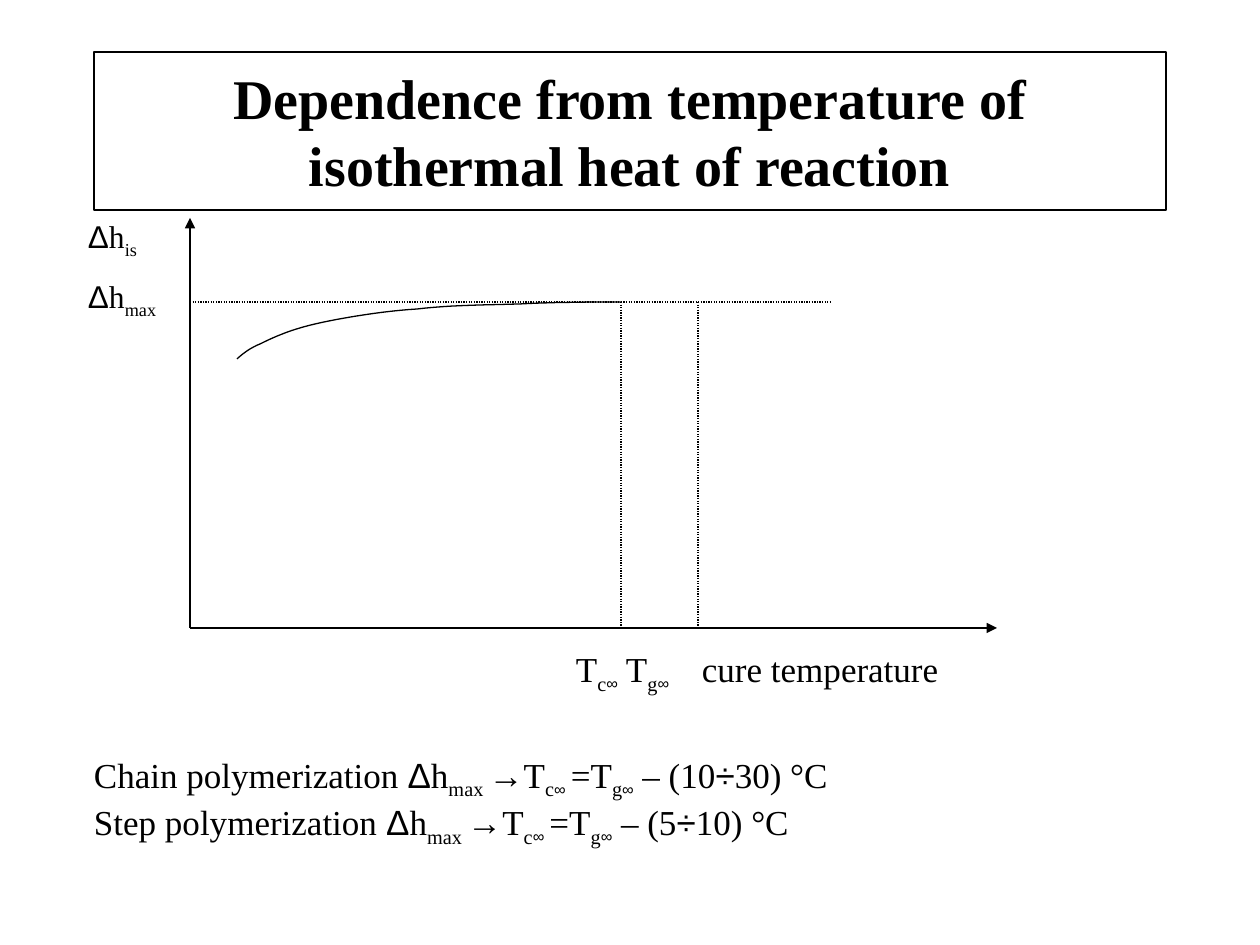
import pptx
import pptx.util
import pptx.dml.color
import pptx.enum.dml
import pptx.enum.shapes
import pptx.enum.text
import pptx.oxml
import pptx.oxml.ns

PX = 914400 / 126
BLACK = "000000"
SERIF, SANS = "Times New Roman", "Arial"
DELTA_H = [("Δ", "symbol"), ("h", "plain")]
T_C = [("T", "plain"), ("c", "sub"), ("∞", "infinity")]
T_G = [("T", "plain"), ("g", "sub"), ("∞", "infinity")]
# Start point, then two control points and an end point for each Bézier piece
CURVE = [
    (47, 141),
    (47, 141), (57, 131), (70, 126),
    (82, 120), (99, 112), (125, 106),
    (151, 100), (193, 93), (227, 91),
    (261, 87), (295, 87), (329, 86),
    (363, 84), (414, 84), (431, 84),
]


def px(length):
    return pptx.util.Emu(round(length * PX))


def color(value):
    return pptx.dml.color.RGBColor.from_string(value)


def style_line(line):
    line.color.rgb = color(BLACK)
    line.width = pptx.util.Pt(0.75)


def write(para, spans, size):
    """Add (text, style) spans; styles are plain, bold, symbol, sub and infinity."""
    for text, style in spans:
        span = para.add_run()
        span.text = text
        font = span.font
        font.name = SANS if style in ("symbol", "infinity") else SERIF
        font.size = pptx.util.Pt(16 if style == "infinity" else size)
        font.bold = style == "bold"
        font.color.rgb = color(BLACK)
        if style in ("sub", "infinity"):
            font._element.set("baseline", "-25000")


def add_text(page, left, top, width, height, inset, lines, size, gap=0):
    box = page.shapes.add_textbox(px(left), px(top), px(width), px(height))
    frame = box.text_frame
    frame.word_wrap = True
    frame.auto_size = pptx.enum.text.MSO_AUTO_SIZE.SHAPE_TO_FIT_TEXT
    frame.margin_left = frame.margin_right = px(inset)
    frame.margin_top = frame.margin_bottom = px(inset // 2)
    for index, spans in enumerate(lines):
        para = frame.add_paragraph() if index else frame.paragraphs[0]
        para.space_before = pptx.util.Pt(gap)
        write(para, spans, size)
    return box


def add_line(page, start, end, arrow=False):
    """Draw a solid arrow or a dotted guide."""
    connector = page.shapes.add_connector(
        pptx.enum.shapes.MSO_CONNECTOR.STRAIGHT, *map(px, start + end))
    style_line(connector.line)
    if arrow:
        tail = pptx.oxml.parse_xml(
            f'<a:tailEnd {pptx.oxml.ns.nsdecls("a")} type="triangle"/>')
        connector.line._get_or_add_ln().append(tail)
    else:
        connector.line.dash_style = pptx.enum.dml.MSO_LINE.ROUND_DOT
    connector._element.spPr.append(pptx.oxml.parse_xml(
        f'<a:effectLst {pptx.oxml.ns.nsdecls("a")}/>'))


def bezier_points(controls, steps=12):
    points = [controls[0]]
    for first in range(0, len(controls) - 1, 3):
        a, b, c, d = controls[first:first + 4]
        for step in range(1, steps + 1):
            t = step / steps
            u = 1 - t
            points.append(tuple(
                u**3 * a[k] + 3 * u * u * t * b[k] + 3 * u * t * t * c[k] + t**3 * d[k]
                for k in (0, 1)))
    return points


def add_title(page, left, top, width, height):
    title = page.shapes.title
    title.left, title.top, title.width, title.height = map(
        px, (left, top, width, height))
    style_line(title.line)
    frame = title.text_frame
    frame.auto_size = pptx.enum.text.MSO_AUTO_SIZE.NONE
    frame.vertical_anchor = pptx.enum.text.MSO_ANCHOR.MIDDLE
    para = frame.paragraphs[0]
    para.alignment = pptx.enum.text.PP_ALIGN.CENTER
    write(para, [("Dependence from temperature of isothermal heat of reaction", "bold")], 32)


def add_diagram(page, left, top, width, height):
    bottom = top + height
    plateau = top + 84
    add_line(page, (left, bottom), (left, top), arrow=True)
    add_line(page, (left, bottom), (left + width, bottom), arrow=True)
    add_text(page, left - 121, top - 10, 111, 115, 19,
             [DELTA_H + [("is", "sub")], DELTA_H + [("max", "sub")]], 18, gap=10)
    axis_label = add_text(
        page, left - 11, bottom + 11, 1060, 62, 19,
        [T_C + [(" ", "plain")] + T_G + [(" \tcure temperature", "plain")]], 20)
    properties = axis_label.text_frame.paragraphs[0]._p.get_or_add_pPr()
    properties.set("marL", str(px(378)))
    properties.set("indent", "0")
    add_line(page, (left, plateau), (left + 641, plateau))
    for offset in (431, 508):
        add_line(page, (left + offset, plateau), (left + offset, bottom))

    points = [(px(left + x), px(top + y)) for x, y in bezier_points(CURVE)]
    builder = page.shapes.build_freeform(*points[0])
    builder.add_line_segments(points[1:], close=False)
    curve = builder.convert_to_shape()
    curve.fill.background()
    curve.shadow.inherit = False
    style_line(curve.line)


def add_rules(page, left, top, width, height):
    """State the temperature rule of each polymerization type."""
    lines = []
    for kind, low, high in (("Chain", 10, 30), ("Step", 5, 10)):
        lines.append(
            [(f"{kind} polymerization ", "plain")] + DELTA_H
            + [("max ", "sub"), ("→", "plain")] + T_C
            + [(" ", "sub"), ("=", "plain")] + T_G
            + [(f" – ({low}", "plain"), ("÷", "symbol"), (f"{high}) °C", "plain")])
    add_text(page, left, top, width, height, 12, lines, 20)


def main():
    deck = pptx.Presentation()
    deck.slide_width, deck.slide_height = px(1260), px(945)
    page = deck.slides.add_slide(deck.slide_layouts.get_by_name("Title Only"))
    add_title(page, 94, 52, 1072, 158)
    add_diagram(page, 190, 218, 807, 410)
    add_rules(page, 82, 747, 796, 97)
    deck.save("out.pptx")


if __name__ == "__main__":
    main()
